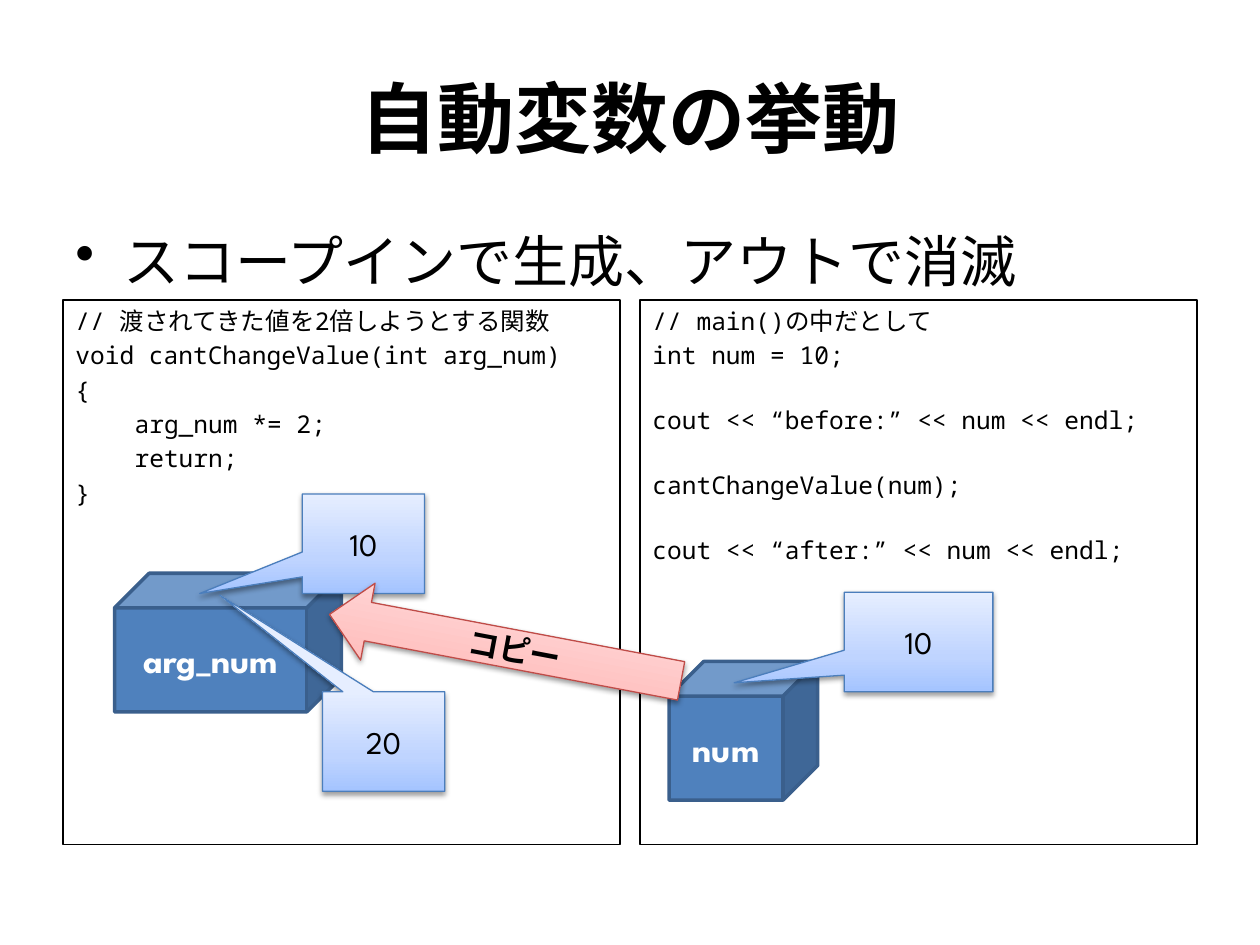
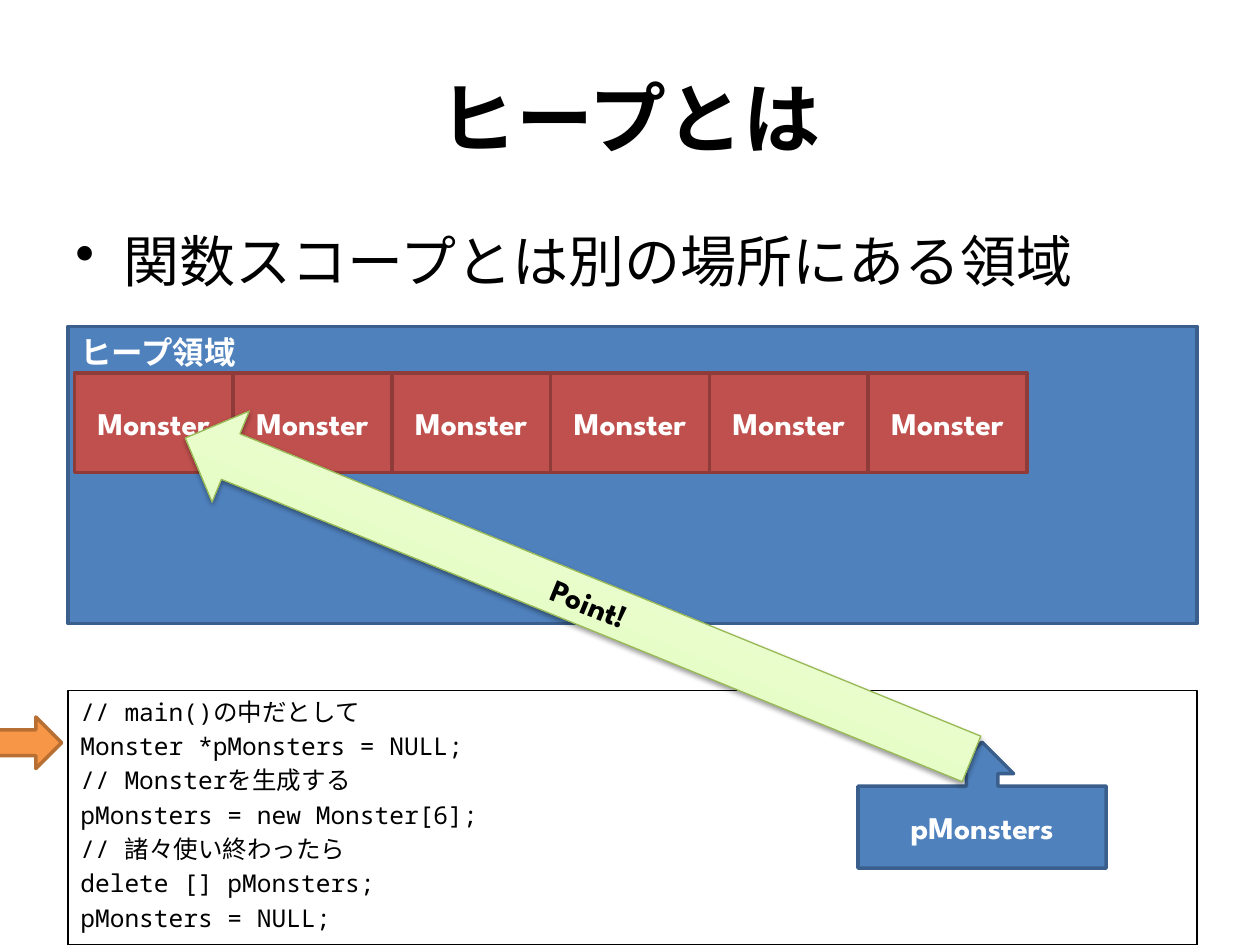
import pptx
import pptx.util
import pptx.dml.color
import pptx.enum.shapes
import pptx.enum.text
import pptx.oxml
import pptx.oxml.ns
from pptx.util import Inches

SHAPES = pptx.enum.shapes.MSO_SHAPE
ALIGN = pptx.enum.text.PP_ALIGN
ANCHOR = pptx.enum.text.MSO_ANCHOR
DISPLAY, MONO = "League Spartan", "Noto Sans Mono"

# Theme: text styles, and fill, line and shadow of each kind of shape
THEME = {
    "text": {
        "title": dict(name=DISPLAY, size=44, bold=True, color="000000"),
        "body": dict(name=DISPLAY, size=32, bold=False, color="000000"),
        "code": dict(name=MONO, size=14, bold=False, color="000000"),
        "variable": dict(name=DISPLAY, size=20, bold=True, color="FFFFFF"),
        "label": dict(name=DISPLAY, size=18, bold=True, color="FFFFFF"),
        "value": dict(name=DISPLAY, size=18, bold=False, color="000000"),
        "action": dict(name=DISPLAY, size=18, bold=True, color="000000"),
    },
    "look": {
        "outline": dict(fill=None, line="000000", width=0.75),
        "blue": dict(fill="4F81BD", line="3A5F8C", width=2),
        "red": dict(fill="C0504D", line="8E3B39", width=2),
        "orange": dict(fill="F79646", line="B76F34", width=2),
        "pale blue": dict(fill=("A4C4FF", "BFD4FF", "E6EEFF"), line="4B7EBC", width=0.75),
        "pale red": dict(fill=("FFA6A5", "FFC0BF", "FFE7E7"), line="BF4C48", width=0.75),
        "pale green": dict(fill=("DAFDA7", "E4FCC2", "F5FFE7"), line="98B955", width=0.75),
    },
    "gradient positions": (0, 35, 100),
    "code tab": 0.47,
    "code blank line": 20.2,
}
NAMESPACE = pptx.oxml.ns.nsdecls("a")
SHADOW = (
    f'<a:outerShdw {NAMESPACE} blurRad="39370" dist="20320" dir="5400000" rotWithShape="0">'
    '<a:srgbClr val="000000"><a:alpha val="38000"/></a:srgbClr></a:outerShdw>'
)
SPACE_BEFORE = f'<a:spcBef {NAMESPACE}><a:spcPct val="20000"/></a:spcBef>'
BULLET = f'<a:buChar {NAMESPACE} char="•"/>'


def write_text(shape, text, style, anchor=ANCHOR.MIDDLE, align=ALIGN.CENTER):
    """Write lines; leading spaces become an indent, blank lines become spacing."""
    frame = shape.text_frame
    for name, value in dict(word_wrap=True, vertical_anchor=anchor).items():
        setattr(frame, name, value)
    format_values = dict(THEME["text"][style])
    color = pptx.dml.color.RGBColor.from_string(format_values.pop("color"))
    format_values["size"] = pptx.util.Pt(format_values["size"])
    paragraph, after_blank = None, False
    for line in text.split("\n"):
        if not line:
            after_blank = True
            continue
        paragraph = frame.add_paragraph() if paragraph else frame.paragraphs[0]
        paragraph.alignment = align
        properties = paragraph._p.get_or_add_pPr()
        if line.startswith(" "):
            properties.set("marL", str(Inches(THEME["code tab"])))
        if after_blank:
            paragraph.space_before = pptx.util.Pt(THEME["code blank line"])
        elif style in ("code", "body"):
            properties.append(pptx.oxml.parse_xml(SPACE_BEFORE))
        if style == "body":
            properties.set("marL", str(Inches(0.38)))
            properties.set("indent", str(Inches(-0.38)))
            properties.append(pptx.oxml.parse_xml(BULLET))
        run = paragraph.add_run()
        run.text = line.strip()
        for name, value in format_values.items():
            setattr(run.font, name, value)
        run.font.color.rgb = color
        after_blank = False


def add_shape(slide, kind, box, look, adjustments=(), rotation=0):
    shape = slide.shapes.add_shape(kind, *map(Inches, box))
    shape.rotation = rotation
    for index, value in enumerate(adjustments):
        shape.adjustments[index] = value
    shape.shadow.inherit = False
    values = THEME["look"][look]
    properties = shape.element.spPr
    if values["fill"] is None:
        shape.fill.background()
    elif isinstance(values["fill"], str):
        shape.fill.solid()
        shape.fill.fore_color.rgb = pptx.dml.color.RGBColor.from_string(values["fill"])
    else:
        shape.fill.gradient()
        shape.fill.gradient_angle = 90
        stops = properties.find(".//" + pptx.oxml.ns.qn("a:gsLst"))
        for stop in list(stops):
            stops.remove(stop)
        for position, color in zip(THEME["gradient positions"], values["fill"]):
            stops.append(pptx.oxml.parse_xml(
                f'<a:gs {NAMESPACE} pos="{position * 1000}"><a:srgbClr val="{color}"/></a:gs>'))
        effects = properties.find(pptx.oxml.ns.qn("a:effectLst"))
        effects.append(pptx.oxml.parse_xml(SHADOW))
    shape.line.color.rgb = pptx.dml.color.RGBColor.from_string(values["line"])
    shape.line.width = pptx.util.Pt(values["width"])
    return shape


presentation = pptx.Presentation()
presentation.slide_width, presentation.slide_height = Inches(10), Inches(7.5)

# Title and bullet on both slides
slides = []
for title, bullet in (
    ("自動変数の挙動", "スコープインで生成、アウトで消滅"),
    ("ヒープとは", "関数スコープとは別の場所にある領域"),
):
    slide = presentation.slides.add_slide(presentation.slide_layouts[6])
    slides.append(slide)
    title_box = slide.shapes.add_textbox(Inches(0.5), Inches(0.3), Inches(9), Inches(1.25))
    write_text(title_box, title, "title")
    body_box = slide.shapes.add_textbox(Inches(0.5), Inches(1.75), Inches(9), Inches(4.95))
    write_text(body_box, bullet, "body", ANCHOR.TOP, ALIGN.LEFT)
variable_slide, heap_slide = slides

# Code panels
function_code = """// 渡されてきた値を2倍しようとする関数
void cantChangeValue(int arg_num)
{
    arg_num *= 2;
    return;
}"""
caller_code = """// main()の中だとして
int num = 10;

cout << “before:” << num << endl;

cantChangeValue(num);

cout << “after:” << num << endl;"""
heap_code = """// main()の中だとして
Monster *pMonsters = NULL;
// Monsterを生成する
pMonsters = new Monster[6];
// 諸々使い終わったら
delete [] pMonsters;
pMonsters = NULL;"""
for slide, code, box in (
    (variable_slide, function_code, (0.5, 2.38, 4.42, 4.32)),
    (variable_slide, caller_code, (5.08, 2.38, 4.42, 4.32)),
    (heap_slide, heap_code, (0.54, 5.48, 8.96, 2.02)),
):
    panel = add_shape(slide, SHAPES.RECTANGLE, box, "outline")
    write_text(panel, code, "code", ANCHOR.TOP, ALIGN.LEFT)

# Slide 1: variables as cubes, their values, and the copy between them
cube, callout = SHAPES.CUBE, SHAPES.RECTANGULAR_CALLOUT
for kind, text, style, box, look, adjustments, rotation in (
    (cube, "num", "variable", (5.31, 5.25, 1.18, 1.1), "blue", (), 0),
    (callout, "10", "value", (6.7, 4.7, 1.18, 0.79), "pale blue", (-1.24, 0.41), 0),
    (cube, "arg_num", "variable", (0.91, 4.55, 1.8, 1.1), "blue", (), 0),
    (callout, "10", "value", (2.4, 3.92, 0.97, 0.79), "pale blue", (-1.34, 0.5), 0),
    (SHAPES.LEFT_ARROW, "コピー", "action", (2.59, 4.83, 2.84, 0.62), "pale red", (), 10.7),
    (callout, "20", "value", (2.56, 5.49, 0.97, 0.79), "pale blue", (-1.34, -1.47), 0),
):
    shape = add_shape(variable_slide, kind, box, look, adjustments, rotation)
    write_text(shape, text, style)

# Slide 2: pointer variable and heap area
pointer = add_shape(heap_slide, SHAPES.UP_ARROW_CALLOUT, (6.81, 5.89, 1.97, 1), "blue")
write_text(pointer, "pMonsters", "label")
heap = add_shape(heap_slide, SHAPES.RECTANGLE, (0.54, 2.59, 8.96, 2.36), "blue")
write_text(heap, "ヒープ領域", "label", ANCHOR.TOP, ALIGN.LEFT)

# Slide 2: array elements side by side
element_width = 1.26
for index in range(6):
    box = (0.59 + index * element_width, 2.96, element_width, 0.79)
    element = add_shape(heap_slide, SHAPES.RECTANGLE, box, "red")
    write_text(element, "Monster", "label")

# Slide 2: current line marker and pointing arrow
add_shape(heap_slide, SHAPES.RIGHT_ARROW, (-0.14, 5.69, 0.63, 0.41), "orange")
point_arrow = add_shape(
    heap_slide, SHAPES.LEFT_ARROW, (1.22, 4.36, 6.74, 0.78), "pale green", rotation=22.2)
write_text(point_arrow, "Point!", "action")

presentation.save("out.pptx")
